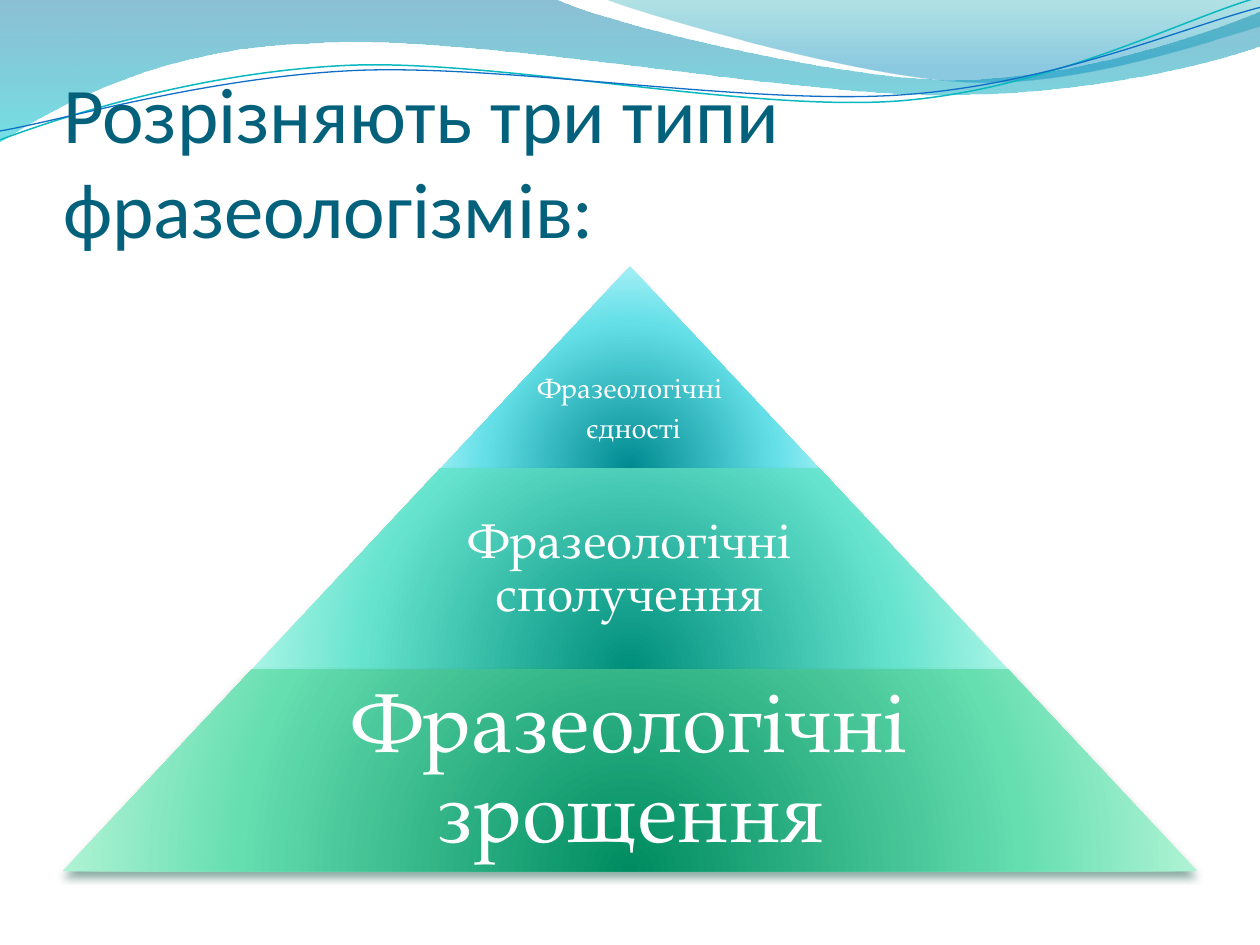
from dataclasses import dataclass

import lxml.etree
import pptx
import pptx.dml.color
import pptx.enum.shapes
import pptx.enum.text
import pptx.oxml.ns
import pptx.util

Cm = pptx.util.Cm
Pt = pptx.util.Pt
RGBColor = pptx.dml.color.RGBColor
Point = tuple[float, float]
Outline = list[tuple[Point, ...]]

WHITE = RGBColor(0xFF, 0xFF, 0xFF)
TITLE_COLOR = RGBColor(0x04, 0x61, 0x7B)
TEAL_LINE = RGBColor(0x0A, 0xB8, 0xBF)
BLUE_LINE = RGBColor(0x0F, 0x6F, 0xC6)

SLIDE_WIDTH = 25.4
PYRAMID_TOP = 5.38
TIER_HEIGHT = 4.06
TIER_WIDTH_STEP = 7.62
STRAND_ROTATION = 357.3


@dataclass
class Stop:
    position: int
    color: RGBColor
    opacity: int = 100


@dataclass
class Band:
    outline: Outline
    stops: list[Stop]


@dataclass
class Strand:
    outline: Outline
    color: RGBColor
    width: float


@dataclass
class Tier:
    lines: list[str]
    size: int
    text_share: float
    inset: float
    extra_top: float
    stops: list[Stop]
    shadow: RGBColor


BANDS = [
    Band(
        [((0, 0),), ((11.18, -0.03),),
         ((12.09, 0.43), (16.87, 1.6), (19.25, 1.6)),
         ((21.67, 1.6), (24.33, 0.66), (25.4, 0.23)),
         ((25.43, 0.91),),
         ((24.97, 1.12), (22.1, 1.93), (18.95, 1.91)),
         ((15.8, 1.91), (9.7, 0.71), (6.53, 0.86)),
         ((3.28, 0.91), (1.17, 2.11), (-0.03, 2.87))],
        [Stop(0, RGBColor(0x00, 0x74, 0xA1), 45), Stop(100, RGBColor(0x00, 0xC6, 0xCF), 55)],
    ),
    Band(
        [((12.17, -0.03),),
         ((12.93, 0.28), (17.32, 1.57), (19.53, 1.65)),
         ((21.74, 1.75), (24.41, 0.81), (25.4, 0.53)),
         ((25.4, 0),)],
        [Stop(0, RGBColor(0x00, 0xA1, 0xA9), 30), Stop(80, RGBColor(0x00, 0x8B, 0xBF), 45)],
    ),
]

STRANDS = [
    Strand(
        [((-0.05, 2.22),),
         ((1.19, 1.82), (4.02, 1.04), (7.05, 1.05)),
         ((10.05, 1.07), (15.02, 2.37), (18.08, 2.29)),
         ((21.13, 2.2), (23.87, 0.91), (25.41, 0.55))],
        TEAL_LINE, 0.85,
    ),
    Strand(
        [((-0.04, 2.04),),
         ((1.16, 1.9), (4.18, 1.15), (7.2, 1.16)),
         ((10.25, 1.18), (15.13, 2.25), (18.18, 2.17)),
         ((21.21, 2.1), (23.93, 1.06), (25.45, 0.75))],
        BLUE_LINE, 0.75,
    ),
]

TIERS = [
    Tier(["Фразеологічні", " єдності"], 16, 1, 0.05, 1.68,
         [Stop(0, RGBColor(0x00, 0x8A, 0x91)), Stop(68, RGBColor(0x64, 0xDF, 0xE7)),
          Stop(100, RGBColor(0xB1, 0xF3, 0xF9))], RGBColor(0x02, 0x4B, 0x4E)),
    Tier(["Фразеологічні сполучення"], 28, 0.65, 0.1, 0,
         [Stop(0, RGBColor(0x00, 0x8F, 0x7C)), Stop(68, RGBColor(0x65, 0xE3, 0xCE)),
          Stop(100, RGBColor(0xB1, 0xF6, 0xE8))], RGBColor(0x03, 0x4C, 0x44)),
    Tier(["Фразеологічні зрощення"], 48, 0.65, 0.17, 0,
         [Stop(0, RGBColor(0x00, 0x8C, 0x60)), Stop(68, RGBColor(0x65, 0xDE, 0xB0)),
          Stop(100, RGBColor(0xB2, 0xF4, 0xD6))], RGBColor(0x04, 0x4A, 0x37)),
]


def add_element(parent, name: str, **attributes):
    values = {key: str(value) for key, value in attributes.items()}
    return lxml.etree.SubElement(parent, pptx.oxml.ns.qn(f"a:{name}"), values)


def add_color(parent, color: RGBColor, opacity: int) -> None:
    add_element(add_element(parent, "srgbClr", val=color), "alpha", val=opacity * 1000)


def set_gradient(shape, stops: list[Stop], radial: bool) -> None:
    shape.fill.background()
    properties = shape._element.spPr
    gradient = add_element(properties, "gradFill", rotWithShape=1)
    stop_list = add_element(gradient, "gsLst")
    for stop in stops:
        add_color(add_element(stop_list, "gs", pos=stop.position * 1000), stop.color, stop.opacity)
    if radial:
        circle = add_element(gradient, "path", path="circle")
        add_element(circle, "fillToRect", l=50000, t=130000, r=50000, b=-30000)
    else:
        add_element(gradient, "lin", ang=5400000, scaled=0)
    properties.replace(properties.find(pptx.oxml.ns.qn("a:noFill")), gradient)


def add_shadow(shape, color: RGBColor) -> None:
    effects = shape._element.spPr.find(pptx.oxml.ns.qn("a:effectLst"))
    shadow = add_element(effects, "outerShdw", blurRad=Pt(4.5), dist=Pt(3), dir=5400000, rotWithShape=0)
    add_color(shadow, color, 48)


def bend_segments(shape, outline: Outline) -> None:
    straight_lines = list(shape._element.iter(pptx.oxml.ns.qn("a:lnTo")))
    for line, segment in zip(straight_lines, outline[1:]):
        if len(segment) == 3:
            parent = line.getparent()
            curve = add_element(parent, "cubicBezTo")
            for x, y in segment:
                add_element(curve, "pt", x=Cm(x) - shape.left, y=Cm(y) - shape.top)
            parent.replace(line, curve)


def draw_outline(slide, outline: Outline, close: bool):
    start, *rest = [(Cm(x), Cm(y)) for x, y in (segment[-1] for segment in outline)]
    builder = slide.shapes.build_freeform(*start)
    builder.add_line_segments(rest, close=close)
    shape = builder.convert_to_shape()
    bend_segments(shape, outline)
    shape.shadow.inherit = False
    return shape


def draw_band(slide, band: Band) -> None:
    shape = draw_outline(slide, band.outline, True)
    set_gradient(shape, band.stops, False)
    shape.line.fill.background()


def draw_strand(slide, strand: Strand) -> None:
    shape = draw_outline(slide, strand.outline, False)
    shape.rotation = STRAND_ROTATION
    shape.fill.background()
    shape.line.color.rgb = strand.color
    shape.line.width = Pt(strand.width)


def draw_tier(slide, tier: Tier, index: int) -> None:
    width = TIER_WIDTH_STEP * (index + 1)
    top = Cm(PYRAMID_TOP + TIER_HEIGHT * index)
    shape = slide.shapes.add_shape(
        pptx.enum.shapes.MSO_SHAPE.TRAPEZOID,
        Cm((SLIDE_WIDTH - width) / 2), top, Cm(width), Cm(TIER_HEIGHT))
    shape.adjustments[0] = 0.937
    shape.shadow.inherit = False
    set_gradient(shape, tier.stops, True)
    shape.line.fill.background()
    add_shadow(shape, tier.shadow)

    text_width = width * tier.text_share
    label = slide.shapes.add_textbox(
        Cm((SLIDE_WIDTH - text_width) / 2), top, Cm(text_width), Cm(TIER_HEIGHT))
    frame = label.text_frame
    frame.word_wrap = True
    frame.vertical_anchor = pptx.enum.text.MSO_ANCHOR.MIDDLE
    frame.margin_left = frame.margin_right = frame.margin_bottom = Cm(tier.inset)
    frame.margin_top = Cm(tier.inset + tier.extra_top)
    frame.text = "\n".join(tier.lines)
    for paragraph in frame.paragraphs:
        paragraph.alignment = pptx.enum.text.PP_ALIGN.CENTER
        paragraph.line_spacing = 0.9
        paragraph.space_after = Pt(tier.size * 0.35)
        format_runs(paragraph, "TeX Gyre Pagella", tier.size, WHITE)


def format_runs(paragraph, name: str, size: int, color: RGBColor) -> None:
    for run in paragraph.runs:
        run.font.name = name
        run.font.size = Pt(size)
        run.font.color.rgb = color


def place_title(slide) -> None:
    title = slide.shapes.title
    title.left, title.top, title.width, title.height = Cm(1.27), Cm(1.95), Cm(22.86), Cm(3.17)
    frame = title.text_frame
    frame.text = "Розрізняють три типи фразеологізмів:"
    frame.word_wrap = True
    frame.auto_size = pptx.enum.text.MSO_AUTO_SIZE.NONE
    frame.vertical_anchor = pptx.enum.text.MSO_ANCHOR.BOTTOM
    frame.margin_left = frame.margin_right = frame.margin_bottom = 0
    frame.margin_top = Cm(0.13)
    paragraph = frame.paragraphs[0]
    paragraph.alignment = pptx.enum.text.PP_ALIGN.LEFT
    format_runs(paragraph, "Calibri", 45, TITLE_COLOR)
    slide.shapes._spTree.append(title._element)


def main() -> None:
    presentation = pptx.Presentation()
    presentation.slide_width = Cm(SLIDE_WIDTH)
    presentation.slide_height = Cm(19.05)
    slide = presentation.slides.add_slide(presentation.slide_layouts[5])
    for band in BANDS:
        draw_band(slide, band)
    for strand in STRANDS:
        draw_strand(slide, strand)
    place_title(slide)
    for index, tier in enumerate(TIERS):
        draw_tier(slide, tier, index)
    presentation.save("out.pptx")


if __name__ == "__main__":
    main()
